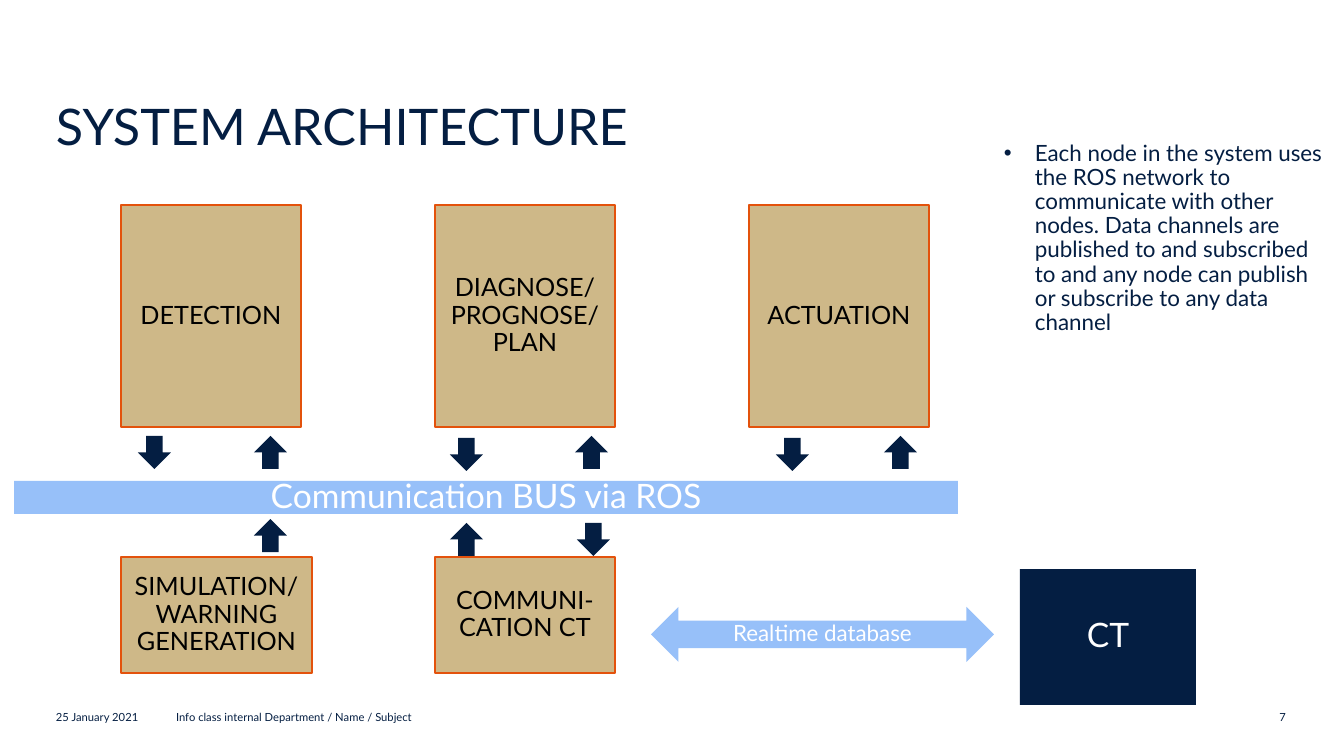
from lxml import etree
from pptx import Presentation
from pptx.dml.color import RGBColor
from pptx.enum.shapes import MSO_SHAPE as Geo
from pptx.enum.text import MSO_ANCHOR as Anchor, MSO_AUTO_SIZE as Fit, PP_ALIGN as Align
from pptx.oxml.ns import qn
from pptx.util import Pt

PX = 914400 / 100.8
NAVY, GOLD, RED, SKY = "041E42", "CEB888", "E3520C", "97C0F9"
WHITE, BLACK = "FFFFFF", "000000"

# Content
TITLE = "SYSTEM ARCHITECTURE"
NOTE = ("Each node in the system uses the ROS network to communicate with other "
        "nodes. Data channels are published to and subscribed to and any node "
        "can publish or subscribe to any data channel")
FOOTER = [  # text, left, width, alignment
    ("25 January 2021", 56, 115, Align.LEFT),
    ("Info class internal Department / Name / Subject", 176, 727, Align.LEFT),
    ("7", 1231, 55, Align.RIGHT),
]
NODES = [  # text, column, row, width
    ("DETECTION", 0, 0, 180),
    ("DIAGNOSE/PROGNOSE/PLAN", 1, 0, 180),
    ("ACTUATION", 2, 0, 180),
    ("SIMULATION/WARNING GENERATION", 0, 1, 191),
    ("COMMUNI-CATION CT", 1, 1, 180),
]
ROWS = [(205, 222), (557, 116)]  # top, height
LINKS = [  # text, shape, box, fill, size
    ("CT", Geo.RECTANGLE, (1020, 569, 176, 136), NAVY, 24),
    ("Communication BUS via ROS", Geo.RECTANGLE, (14, 481, 944, 33), SKY, 24),
    ("Realtime database", Geo.LEFT_RIGHT_ARROW, (651, 607, 343, 55), SKY, 16),
]
DOWN = [(138, 436), (450, 438), (776, 438), (577, 523)]
UP = [(254, 436), (575, 436), (884, 436), (254, 519), (450, 523)]
LEFT, PITCH, SIDE = 121, 314, 33


def px(n):
    return round(n * PX)


def rgb(code):
    return RGBColor.from_string(code)


def write(frame, text, size, color, align=Align.LEFT, anchor=Anchor.MIDDLE,
          space=0.9, flush=False):
    frame.text = text
    frame.word_wrap = True
    frame.vertical_anchor = anchor
    if flush:
        frame.margin_left = frame.margin_right = 0
        frame.margin_top = frame.margin_bottom = 0
    para = frame.paragraphs[0]
    para.alignment = align
    para.line_spacing = space
    para.space_before = Pt(0)
    font = para.runs[0].font
    font.name, font.size = "Lato", Pt(size)
    font.color.rgb = rgb(color)
    return para


def draw(geo, box, fill, edge=None):
    shape = slide.shapes.add_shape(geo, *map(px, box))
    shape.shadow.inherit = False
    shape.fill.solid()
    shape.fill.fore_color.rgb = rgb(fill)
    if edge:
        shape.line.color.rgb = rgb(edge)
        shape.line.width = Pt(1)
    else:
        shape.line.fill.background()
    return shape


def label(box):
    return slide.shapes.add_textbox(*map(px, box)).text_frame


deck = Presentation()
deck.slide_width, deck.slide_height = px(1344), px(756)
slide = deck.slides.add_slide(deck.slide_layouts[5])

# Title
title = slide.shapes.title
title.left, title.top, title.width, title.height = map(px, (56, 40, 1167, 116))
write(title.text_frame, TITLE, 36, NAVY, anchor=Anchor.BOTTOM, flush=True)
title.text_frame.auto_size = Fit.NONE

# Footer
for text, x, w, align in FOOTER:
    write(label((x, 706, w, 23)), text, 8, NAVY, align, space=1.0, flush=True)

# Nodes
for text, col, row, w in NODES:
    top, high = ROWS[row]
    node = draw(Geo.RECTANGLE, (LEFT + col * PITCH, top, w, high), GOLD, RED)
    write(node.text_frame, text, 18, BLACK, Align.CENTER)

# CT, bus and database link
for text, geo, box, fill, size in LINKS:
    write(draw(geo, box, fill).text_frame, text, size, WHITE, Align.CENTER)

# Arrows to and from the bus
for spots, turn in ((DOWN, 0), (UP, 180)):
    for x, y in spots:
        draw(Geo.DOWN_ARROW, (x, y, SIDE, SIDE), NAVY).rotation = turn

# Bulleted note
frame = label((994, 137, 343, 230))
para = write(frame, NOTE, 16, NAVY, anchor=Anchor.TOP)
frame.auto_size = Fit.SHAPE_TO_FIT_TEXT
props = para._p.get_or_add_pPr()
props.set("marL", str(px(31)))
props.set("indent", str(-px(31)))
etree.SubElement(props, qn("a:buFont")).set("typeface", "Arial")
etree.SubElement(props, qn("a:buChar")).set("char", "•")

deck.save("out.pptx")
